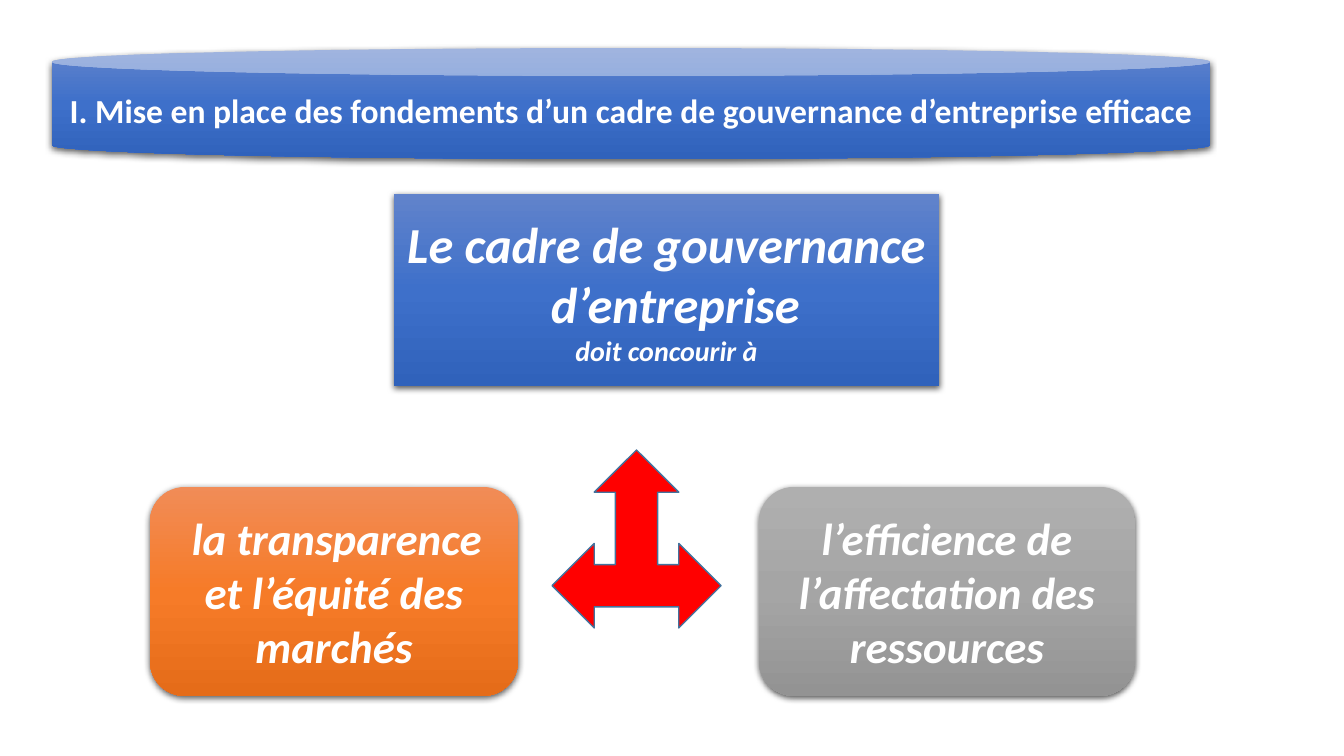
import pptx
import pptx.util
import pptx.dml.color
import pptx.enum.shapes
import pptx.enum.text
import pptx.oxml
import pptx.oxml.ns
import copy

RGBColor = pptx.dml.color.RGBColor
SHAPES = pptx.enum.shapes.MSO_SHAPE
PX = 914400 / 100.8

WHITE = RGBColor(0xFF, 0xFF, 0xFF)
RED = RGBColor(0xFF, 0x00, 0x00)
ARROW_EDGE = RGBColor(0x43, 0x73, 0x9E)
BLUES = [RGBColor(0x61, 0x83, 0xCB), RGBColor(0x3E, 0x70, 0xCA), RGBColor(0x30, 0x62, 0xBB)]
ORANGES = [RGBColor(0xF1, 0x8C, 0x57), RGBColor(0xF6, 0x7B, 0x28), RGBColor(0xE5, 0x6C, 0x19)]
GREYS = [RGBColor(0xAF, 0xAF, 0xAF), RGBColor(0xA5, 0xA5, 0xA5), RGBColor(0x93, 0x93, 0x93)]

SHADOW = (
    f'<a:outerShdw {pptx.oxml.ns.nsdecls("a")} blurRad="57150" dist="19050" dir="5400000" '
    'algn="ctr" rotWithShape="0"><a:srgbClr val="000000"><a:alpha val="63000"/></a:srgbClr>'
    '</a:outerShdw>'
)

presentation = pptx.Presentation()
presentation.slide_width = round(1344 * PX)
presentation.slide_height = round(756 * PX)
slide = presentation.slides.add_slide(presentation.slide_layouts[6])


def add_shape(kind, box):
    shape = slide.shapes.add_shape(kind, *[round(length * PX) for length in box])
    shape.shadow.inherit = False
    return shape


# Panels: shape, box in px, gradient, wrap, italic, hanging indent in px,
# paragraphs as lists of (text, size)
panels = [
    (SHAPES.CAN, (52, 48, 1158, 111), BLUES, False, False, 0,
     [[("I. Mise en place des fondements d’un cadre de gouvernance d’entreprise efficace", 24)]]),
    (SHAPES.RECTANGLE, (394, 194, 545, 192), BLUES, True, True, 38,
     [[("Le cadre de gouvernance d’entreprise ", 36), (" ", 28)],
      [("doit concourir à", 20)]]),
    (SHAPES.ROUNDED_RECTANGLE, (150, 487, 368, 209), ORANGES, True, True, 0,
     [[(" ", 18), ("la transparence et l’équité des marchés", 32)]]),
    (SHAPES.ROUNDED_RECTANGLE, (759, 487, 376, 209), GREYS, True, True, 0,
     [[("l’efficience de l’affectation des ressources", 32)]]),
]

for kind, box, colours, wrap, italic, indent, paragraphs in panels:
    shape = add_shape(kind, box)
    shape.line.fill.background()

    # Three-stop gradient running downwards
    shape.fill.gradient()
    shape.fill.gradient_angle = 270
    stop_list = shape._element.spPr.find(".//" + pptx.oxml.ns.qn("a:gsLst"))
    stop_list.append(copy.deepcopy(stop_list[0]))
    for stop, colour, position in zip(shape.fill.gradient_stops, colours, (0, 0.5, 1)):
        stop.color.rgb = colour
        stop.position = position

    # Soft shadow below
    effects = shape._element.spPr.find(pptx.oxml.ns.qn("a:effectLst"))
    effects.append(pptx.oxml.parse_xml(SHADOW))

    # Text
    frame = shape.text_frame
    frame.word_wrap = wrap
    frame.vertical_anchor = pptx.enum.text.MSO_ANCHOR.MIDDLE
    for index, runs in enumerate(paragraphs):
        paragraph = frame.add_paragraph() if index else frame.paragraphs[0]
        paragraph.alignment = pptx.enum.text.PP_ALIGN.CENTER
        if indent:
            properties = paragraph._p.get_or_add_pPr()
            properties.set("marL", str(round(indent * PX)))
            properties.set("indent", str(round(-indent * PX)))
        for text, size in runs:
            run = paragraph.add_run()
            run.text = text
            run.font.name = "Calibri"
            run.font.size = pptx.util.Pt(size)
            run.font.bold = True
            run.font.italic = italic
            run.font.color.rgb = WHITE

# Three-way arrow
arrow = add_shape(SHAPES.LEFT_RIGHT_UP_ARROW, (552, 450, 169, 178))
arrow.fill.solid()
arrow.fill.fore_color.rgb = RED
arrow.line.color.rgb = ARROW_EDGE
arrow.line.width = pptx.util.Pt(1)

presentation.save("out.pptx")
